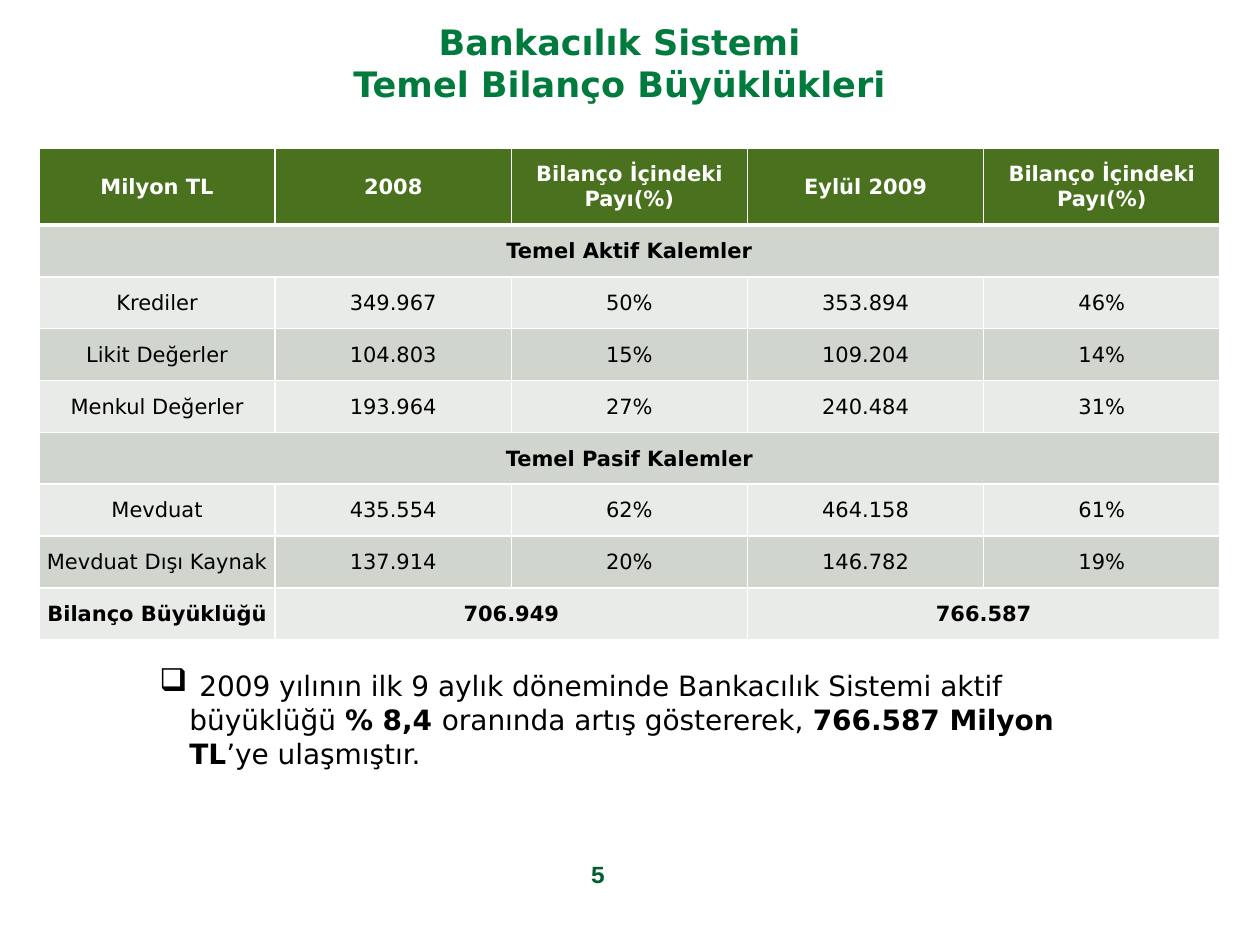
from dataclasses import dataclass

from lxml import etree
from pptx import Presentation
from pptx import util as u
from pptx.dml.color import RGBColor
from pptx.enum import text
from pptx.oxml.ns import qn

WHITE = RGBColor(0xFF, 0xFF, 0xFF)
BLACK = RGBColor(0x00, 0x00, 0x00)
GREEN = RGBColor(0x00, 0x7A, 0x3D)
DARK = RGBColor(0x00, 0x5E, 0x31)
HEAD = RGBColor(0x49, 0x71, 0x1E)
BANDS = (RGBColor(0xE9, 0xEB, 0xE8), RGBColor(0xD0, 0xD5, 0xCD))
SANS, MONO = "DejaVu Sans", "Courier New"
CENTER = text.PP_ALIGN.CENTER
MIDDLE = text.MSO_ANCHOR.MIDDLE


def px(n: float) -> u.Emu:
    return u.Emu(round(n * 914400 / 126))


@dataclass(frozen=True)
class Box:
    left: int
    top: int
    width: int
    height: int

    def emu(self) -> list:
        return [px(n) for n in (self.left, self.top, self.width, self.height)]


@dataclass(frozen=True)
class Row:
    cells: tuple
    span: int = 1       # columns taken by each cell after the label
    bold: bool = False


ROWS = (
    Row(("Milyon TL", "2008", "Bilanço İçindeki Payı(%)",
         "Eylül 2009", "Bilanço İçindeki Payı(%)"), bold=True),
    Row(("Temel Aktif Kalemler",), 5, True),
    Row(("Krediler", "349.967", "50%", "353.894", "46%")),
    Row(("Likit Değerler", "104.803", "15%", "109.204", "14%")),
    Row(("Menkul Değerler", "193.964", "27%", "240.484", "31%")),
    Row(("Temel Pasif Kalemler",), 5, True),
    Row(("Mevduat", "435.554", "62%", "464.158", "61%")),
    Row(("Mevduat Dışı Kaynak", "137.914", "20%", "146.782", "19%")),
    Row(("Bilanço Büyüklüğü", "706.949", "766.587"), 2, True),
)
COLS, HEAD_H = 5, 77
GRID = Box(39, 148, 1181, 492)

NOTE = (
    (" ", 18, False),
    ("2009 yılının ilk 9 aylık döneminde Bankacılık Sistemi aktif büyüklüğü ",
     16, False),
    ("% 8,4 ", 16, True),
    ("oranında artış göstererek, ", 16, False),
    ("766.587 Milyon TL", 16, True),
    ("’ye ulaşmıştır.", 16, False),
)


def apply(obj, vals: dict) -> None:
    for name, val in vals.items():
        setattr(obj, name, val)


def write(para, words: str, size: int, color: RGBColor, bold: bool,
          face: str = SANS) -> None:
    run = para.add_run()
    run.text = words
    apply(run.font, {"size": u.Pt(size), "bold": bold, "name": face})
    run.font.color.rgb = color


def add_text(slide, box: Box):
    frame = slide.shapes.add_textbox(*box.emu()).text_frame
    frame.word_wrap = True
    return frame


def edge(cell, base: int) -> None:
    """White cell borders, the bottom one of the given width in points."""
    props = cell._tc.get_or_add_tcPr()
    for side, width in (("L", 1), ("R", 1), ("T", 1), ("B", base)):
        line = etree.SubElement(props, qn(f"a:ln{side}"), w=str(u.Pt(width)))
        fill = etree.SubElement(line, qn("a:solidFill"))
        etree.SubElement(fill, qn("a:srgbClr"), val=str(WHITE))


def add_grid(slide) -> None:
    frame = slide.shapes.add_table(len(ROWS), COLS, *GRID.emu())
    table = frame.table
    for col in table.columns:
        col.width = px(GRID.width / COLS)
    body = (GRID.height - HEAD_H) / (len(ROWS) - 1)
    for r, row in enumerate(ROWS):
        head = r == 0
        table.rows[r].height = px(HEAD_H if head else body)
        # Cell format
        for c in range(COLS):
            cell = table.cell(r, c)
            edge(cell, 3 if head or r == 1 and False else 1)
            cell.fill.solid()
            cell.fill.fore_color.rgb = HEAD if head else BANDS[r % 2]
            apply(cell, {"margin_left": px(1), "margin_right": px(1),
                         "margin_top": px(1), "margin_bottom": 0,
                         "vertical_anchor": MIDDLE})
        # Words and merged cells
        c = 0
        for words in row.cells:
            cell = table.cell(r, c)
            span = 1 if c == 0 and len(row.cells) > 1 else row.span
            if span > 1:
                cell.merge(table.cell(r, c + span - 1))
            para = cell.text_frame.paragraphs[0]
            para.alignment = CENTER
            write(para, words, 12, WHITE if head else BLACK, row.bold)
            c += span


def add_title(slide) -> None:
    frame = add_text(slide, Box(59, 20, 1134, 84))
    apply(frame, {"vertical_anchor": MIDDLE, "margin_right": px(25)})
    for i, words in enumerate(("Bankacılık Sistemi",
                               "Temel Bilanço Büyüklükleri")):
        para = frame.add_paragraph() if i else frame.paragraphs[0]
        para.alignment = CENTER
        write(para, words, 20, GREEN, True)


def add_note(slide) -> None:
    frame = add_text(slide, Box(147, 659, 1004, 118))
    para = frame.paragraphs[0]
    props = para._p.get_or_add_pPr()
    props.set("marL", str(px(30)))
    props.set("indent", str(-px(30)))
    etree.SubElement(props, qn("a:buChar"), char="❑")
    for words, size, bold in NOTE:
        write(para, words, size, BLACK, bold)


def add_page(slide) -> None:
    para = add_text(slide, Box(451, 859, 294, 66)).paragraphs[0]
    apply(para, {"alignment": CENTER, "line_spacing": 0.76})
    write(para, "5", 14, DARK, True, MONO)


def main() -> None:
    deck = Presentation()
    apply(deck, {"slide_width": px(1260), "slide_height": px(945)})
    slide = deck.slides.add_slide(deck.slide_layouts[6])
    for draw in (add_title, add_page, add_grid, add_note):
        draw(slide)
    deck.save("out.pptx")


if __name__ == "__main__":
    main()
